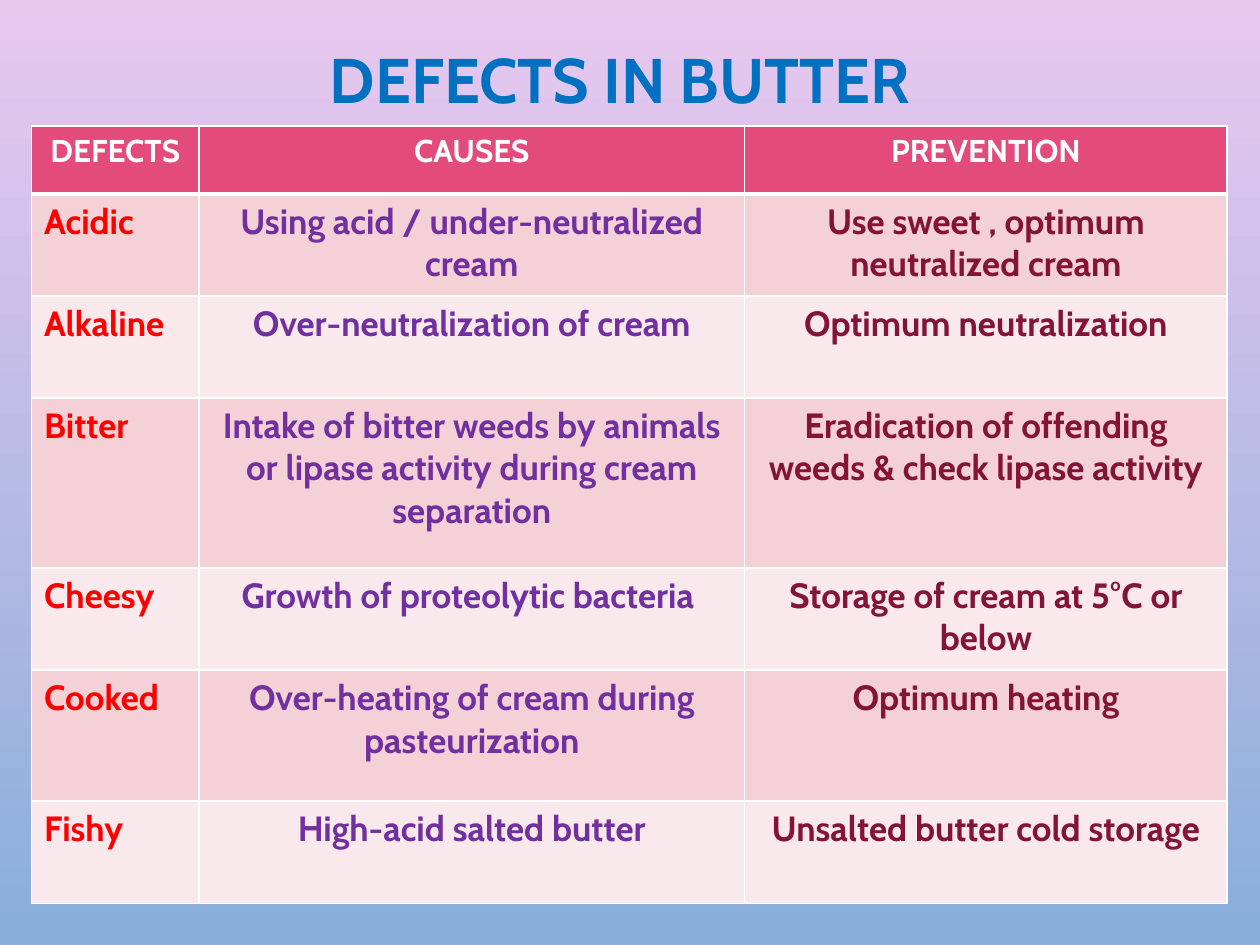
from lxml import etree
from pptx import Presentation
from pptx import util as u
from pptx.dml.color import RGBColor
from pptx.enum import text
from pptx.oxml import ns

FONT = "Cabin"
COLORS = {
    "sky_top": "E9C8EF", "sky_bottom": "89AEDB", "title": "0070C0",
    "white": "FFFFFF", "header": "E34B7A", "band_dark": "F4D0D7",
    "band_light": "FAE9EC", "defect": "FF0000", "cause": "7030A0",
    "prevention": "831436",
}
COLUMN_WIDTHS = [1.33, 4.33, 3.83]
ROW_HEIGHTS = [0.54, 0.81, 0.81, 1.35, 0.81, 1.04, 0.81]
ROWS = [
    ("DEFECTS", "CAUSES", "PREVENTION"),
    ("Acidic", "Using acid / under-neutralized cream",
     "Use sweet , optimum neutralized cream"),
    ("Alkaline ", "Over-neutralization of cream", "Optimum neutralization"),
    ("Bitter",
     "Intake of bitter weeds by animals or lipase activity during cream separation",
     "Eradication of offending weeds & check lipase activity"),
    ("Cheesy", "Growth of proteolytic bacteria ",
     "Storage of cream at 5°C or below"),
    ("Cooked", "Over-heating of cream during pasteurization",
     "Optimum heating"),
    ("Fishy", "High-acid salted butter", "Unsalted butter cold storage"),
]


def write(para, words, size, color, align):
    para.alignment = align
    span = para.add_run()
    span.text = words
    span.font.name = FONT
    span.font.size = u.Pt(size)
    span.font.bold = True
    span.font.color.rgb = RGBColor.from_string(COLORS[color])


def add_borders(cell, top, bottom):
    properties = cell._tc.get_or_add_tcPr()
    for side, points in (("L", 1), ("R", 1), ("T", top), ("B", bottom)):
        line = etree.SubElement(properties, ns.qn(f"a:ln{side}"), w=str(u.Pt(points)))
        fill = etree.SubElement(line, ns.qn("a:solidFill"))
        etree.SubElement(fill, ns.qn("a:srgbClr"), val=COLORS["white"])


deck = Presentation()
deck.slide_width = u.Inches(10)
deck.slide_height = u.Inches(7.5)
page = deck.slides.add_slide(deck.slide_layouts[6])

backdrop = page.background.fill
backdrop.gradient()
backdrop.gradient_angle = 270
for stop, name in zip(backdrop.gradient_stops, ("sky_top", "sky_bottom")):
    stop.color.rgb = RGBColor.from_string(COLORS[name])

box = page.shapes.add_textbox(u.Inches(0.67), u.Inches(0.33), u.Inches(8.5), u.Inches(0.66))
box.text_frame.word_wrap = True
box.text_frame.vertical_anchor = text.MSO_ANCHOR.MIDDLE
para = box.text_frame.paragraphs[0]
para.line_spacing = 0.9
write(para, "DEFECTS IN BUTTER", 36, "title", text.PP_ALIGN.CENTER)

table = page.shapes.add_table(
    len(ROWS), len(COLUMN_WIDTHS), u.Inches(0.25), u.Inches(1),
    u.Inches(sum(COLUMN_WIDTHS)), u.Inches(sum(ROW_HEIGHTS))).table
for column, width in zip(table.columns, COLUMN_WIDTHS):
    column.width = u.Inches(width)
for row, height in zip(table.rows, ROW_HEIGHTS):
    row.height = u.Inches(height)

for r, row in enumerate(ROWS):
    is_header = r == 0
    band = "header" if is_header else ("band_light", "band_dark")[r % 2]
    for c, words in enumerate(row):
        cell = table.cell(r, c)
        add_borders(cell, 3 if r == 1 else 1, 3 if is_header else 1)
        cell.fill.solid()
        cell.fill.fore_color.rgb = RGBColor.from_string(COLORS[band])
        color = "white" if is_header else ("defect", "cause", "prevention")[c]
        is_name = c == 0 and not is_header
        align = text.PP_ALIGN.JUSTIFY if is_name else text.PP_ALIGN.CENTER
        write(cell.text_frame.paragraphs[0], words, 18 if is_header else 20, color, align)

deck.save("out.pptx")
